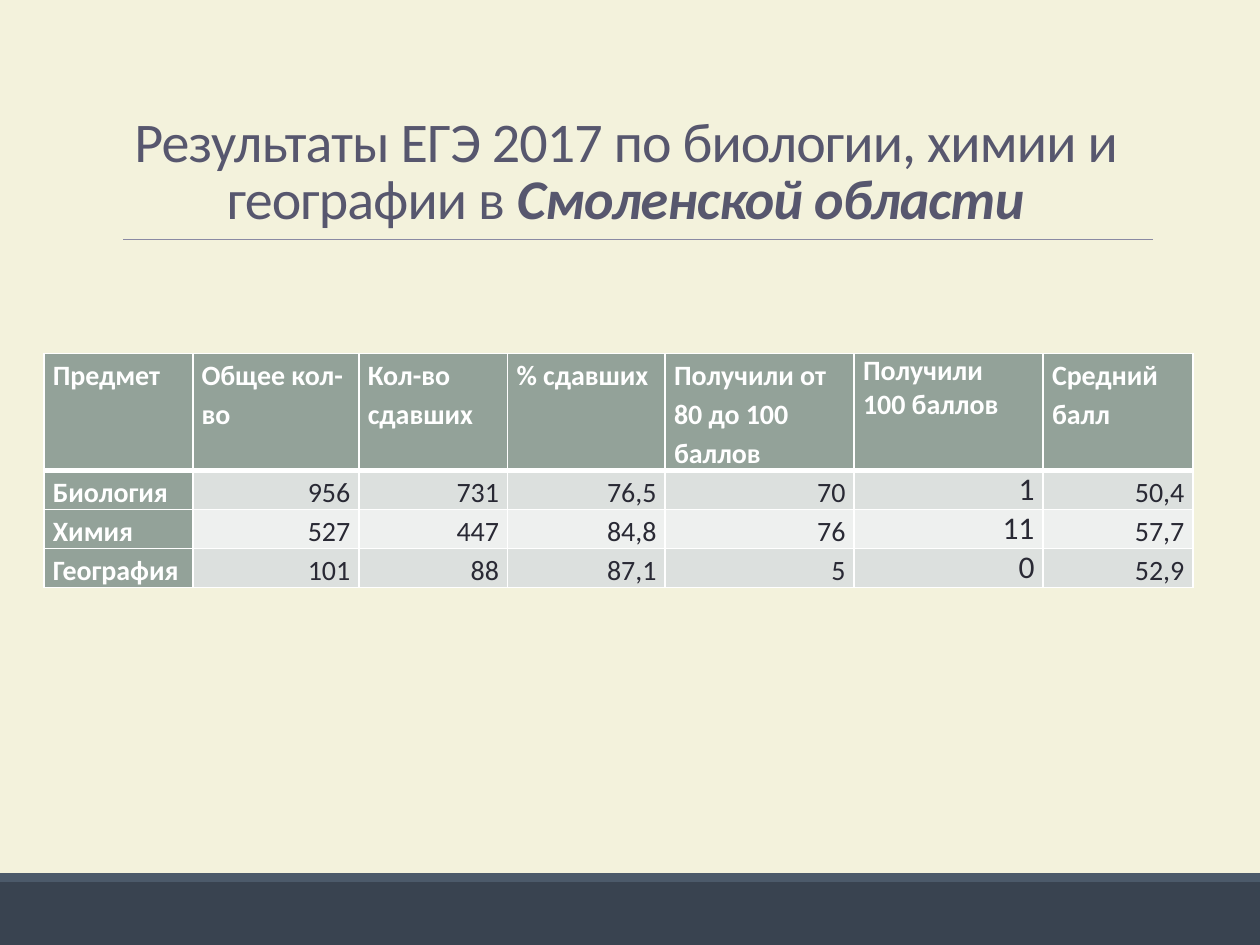
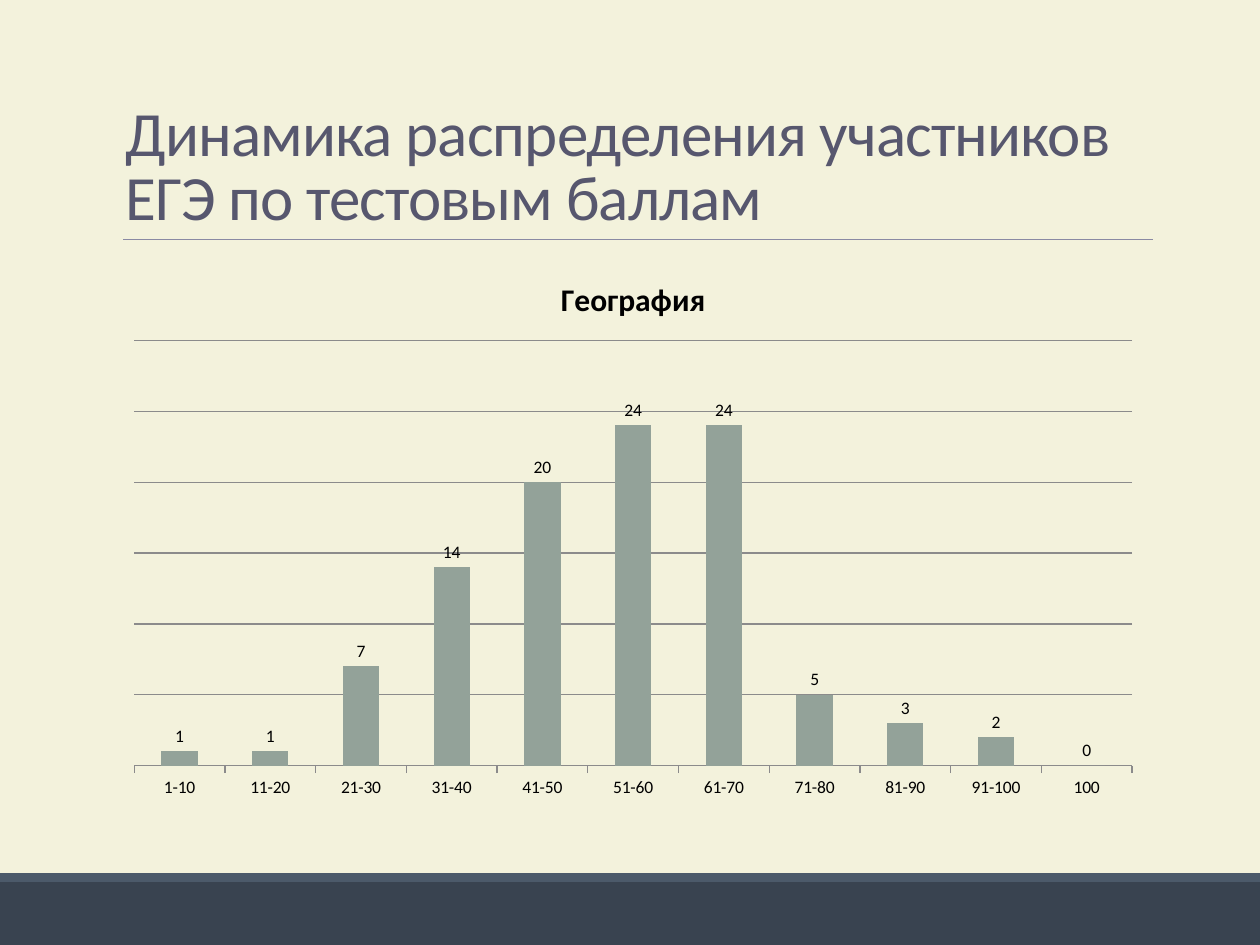
from dataclasses import dataclass

from lxml.etree import SubElement
from pptx import Presentation
from pptx.chart.data import CategoryChartData
from pptx.dml.color import RGBColor
from pptx.enum.chart import XL_CHART_TYPE, XL_LABEL_POSITION, XL_TICK_LABEL_POSITION, XL_TICK_MARK
from pptx.enum.shapes import MSO_CONNECTOR, MSO_SHAPE
from pptx.enum.text import MSO_ANCHOR, PP_ALIGN
from pptx.oxml.ns import qn
from pptx.slide import Slide
from pptx.util import Inches, Length, Pt

CREAM = RGBColor(0xF3, 0xF2, 0xDC)
NAVY = RGBColor(0x39, 0x43, 0x50)
SLATE = RGBColor(0x4C, 0x5A, 0x6A)
MAUVE = RGBColor(0x8A, 0x8A, 0xA3)
PLUM = RGBColor(0x57, 0x57, 0x6E)
SAGE = RGBColor(0x93, 0xA2, 0x99)
MIST = RGBColor(0xDC, 0xE0, 0xDE)
PALE = RGBColor(0xEE, 0xF0, 0xEF)
INK = RGBColor(0x29, 0x29, 0x34)
GREY = RGBColor(0x8B, 0x8B, 0x8B)
BLACK = RGBColor(0, 0, 0)
WHITE = RGBColor(0xFF, 0xFF, 0xFF)

FONT = "Calibri"
COLS, ROWS = 100, 75  # the slide grid
WIDE, TALL = Inches(10), Inches(7.5)


def col(n: float) -> Length:
    return Length(round(WIDE * n / COLS))


def row(n: float) -> Length:
    return Length(round(TALL * n / ROWS))


@dataclass(frozen=True)
class Box:
    """A place on the slide grid, in columns and rows."""
    left: float
    top: float
    width: float
    height: float

    def place(self) -> tuple[Length, Length, Length, Length]:
        return col(self.left), row(self.top), col(self.width), row(self.height)


@dataclass(frozen=True)
class Band:
    box: Box
    fill: RGBColor


@dataclass(frozen=True)
class Piece:
    """One run of a title."""
    text: str
    strong: bool = False


@dataclass(frozen=True)
class Title:
    box: Box
    size: int
    align: PP_ALIGN
    pieces: tuple[Piece, ...]


BANDS = (
    Band(Box(0, 70, COLS, 5), NAVY),
    Band(Box(0, 69.3, COLS, 0.7), SLATE),
)

EXAM = Title(Box(6.7, 2.9, 85.9, 15.9), 32, PP_ALIGN.CENTER, (
    Piece("Результаты ЕГЭ 2017 по биологии, химии и географии в "),
    Piece("Смоленской области", True),
))
TREND = Title(Box(9, 3.1, 82.5, 15.9), 36, PP_ALIGN.LEFT, (
    Piece("Динамика распределения участников ЕГЭ по тестовым баллам"),
))

GRID = Box(3.5, 28.05, 91.2, 18.6)
WIDTHS = (11.8, 13.2, 11.8, 12.5, 15, 15, 11.9)
HEIGHTS = (9.3, 3.1, 3.1, 3.1)
FULL = 5  # column of the 100-point results
MARKS = (
    ("Предмет", "Общее кол-во", "Кол-во сдавших", "% сдавших",
     "Получили от 80 до 100 баллов", "Получили\n100 баллов", "Средний балл"),
    ("Биология", "956", "731", "76,5", "70", "1", "50,4"),
    ("Химия", "527", "447", "84,8", "76", "11", "57,7"),
    ("География", "101", "88", "87,1", "5", "0", "52,9"),
)

PLOT = Box(9, 20.2, 82.5, 44)
COUNTS = {
    "1-10": 1, "11-20": 1, "21-30": 7, "31-40": 14, "41-50": 20, "51-60": 24,
    "61-70": 24, "71-80": 5, "81-90": 3, "91-100": 2, "100": 0,
}


def style(font, size: float, hue: RGBColor, bold: bool = False) -> None:
    font.name, font.size, font.bold = FONT, Pt(size), bold
    font.color.rgb = hue


def add_band(slide: Slide, band: Band) -> None:
    shape = slide.shapes.add_shape(MSO_SHAPE.RECTANGLE, *band.box.place())
    shape.shadow.inherit = False
    shape.fill.solid()
    shape.fill.fore_color.rgb = band.fill
    shape.line.fill.background()


def add_rule(slide: Slide) -> None:
    line = slide.shapes.add_connector(
        MSO_CONNECTOR.STRAIGHT, col(9.8), row(19), col(91.5), row(19))
    line.line.color.rgb = MAUVE
    line.line.width = Pt(0.5)
    SubElement(line._element.spPr, qn("a:effectLst"))


def add_title(slide: Slide, title: Title) -> None:
    frame = slide.shapes.add_textbox(*title.box.place()).text_frame
    frame.word_wrap = True
    frame.vertical_anchor = MSO_ANCHOR.BOTTOM
    para = frame.paragraphs[0]
    para.alignment = title.align
    para.line_spacing = 0.85
    for piece in title.pieces:
        run = para.add_run()
        run.text = piece.text
        style(run.font, title.size, PLUM, piece.strong)
        run.font.italic = piece.strong
        run._r.get_or_add_rPr().set("spc", "-50")


def new_slide(deck, title: Title) -> Slide:
    """Add a slide with the shared ground, bands, rule and title."""
    slide = deck.slides.add_slide(deck.slide_layouts[6])
    slide.background.fill.solid()
    slide.background.fill.fore_color.rgb = CREAM
    for band in BANDS:
        add_band(slide, band)
    add_rule(slide)
    add_title(slide, title)
    return slide


def set_edges(cell, top: float, base: float) -> None:
    """Give a cell white borders; top and base are in points."""
    props = cell._tc.get_or_add_tcPr()
    for side, width in (("L", 1), ("R", 1), ("T", top), ("B", base)):
        edge = SubElement(props, qn(f"a:ln{side}"), w=str(Pt(width)))
        fill = SubElement(edge, qn("a:solidFill"))
        SubElement(fill, qn("a:srgbClr"), val=str(WHITE))


def fill_cell(cell, r: int, c: int, text: str) -> None:
    head = r == 0 or c == 0
    set_edges(cell, 3 if r == 1 else 1, 3 if r == 0 else 1)
    cell.fill.solid()
    cell.fill.fore_color.rgb = SAGE if head else (PALE, MIST)[r % 2]
    cell.margin_left = cell.margin_right = Inches(0.07)
    cell.margin_top = cell.margin_bottom = 0
    low = not head and c < FULL
    cell.vertical_anchor = MSO_ANCHOR.BOTTOM if low else MSO_ANCHOR.TOP
    frame = cell.text_frame
    for i, words in enumerate(text.split("\n")):
        para = frame.add_paragraph() if i else frame.paragraphs[0]
        para.alignment = PP_ALIGN.LEFT if head else PP_ALIGN.RIGHT
        para.line_spacing = 1.0 if c == FULL else 1.15
        run = para.add_run()
        run.text = words
        size = 18 if c == FULL and not head else 16
        style(run.font, size, WHITE if head else INK, head)


def add_marks(slide: Slide) -> None:
    table = slide.shapes.add_table(len(MARKS), len(WIDTHS), *GRID.place()).table
    table.first_col = True
    table.horz_banding = False
    for slot, width in zip(table.columns, WIDTHS):
        slot.width = col(width)
    for r, (line, height) in enumerate(zip(MARKS, HEIGHTS)):
        table.rows[r].height = row(height)
        for c, text in enumerate(line):
            fill_cell(table.cell(r, c), r, c, text)


def add_counts(slide: Slide) -> None:
    data = CategoryChartData()
    data.categories = list(COUNTS)
    data.add_series("География", list(COUNTS.values()))
    chart = slide.shapes.add_chart(
        XL_CHART_TYPE.COLUMN_CLUSTERED, *PLOT.place(), data).chart
    style(chart.font, 10, BLACK)
    chart.has_legend = False
    chart.has_title = True
    run = chart.chart_title.text_frame.paragraphs[0].add_run()
    run.text = "География"
    style(run.font, 18, BLACK, True)

    plot = chart.plots[0]
    plot.gap_width = 150
    plot.vary_by_categories = False
    bars = plot.series[0].format.fill
    bars.solid()
    bars.fore_color.rgb = SAGE
    plot.has_data_labels = True
    labels = plot.data_labels
    labels.show_value = True
    labels.position = XL_LABEL_POSITION.OUTSIDE_END
    style(labels.font, 10, BLACK)

    scale = chart.value_axis
    scale.visible = False
    scale.minimum_scale, scale.maximum_scale, scale.major_unit = 0, 30, 5
    scale.has_major_gridlines = True
    base = chart.category_axis
    base.major_tick_mark = XL_TICK_MARK.OUTSIDE
    base.tick_label_position = XL_TICK_LABEL_POSITION.LOW
    for item in (scale.major_gridlines, base):
        item.format.line.color.rgb = GREY
        item.format.line.width = Pt(0.75)


def main() -> None:
    deck = Presentation()
    deck.slide_width, deck.slide_height = WIDE, TALL
    add_marks(new_slide(deck, EXAM))
    add_counts(new_slide(deck, TREND))
    deck.save("out.pptx")


if __name__ == "__main__":
    main()
